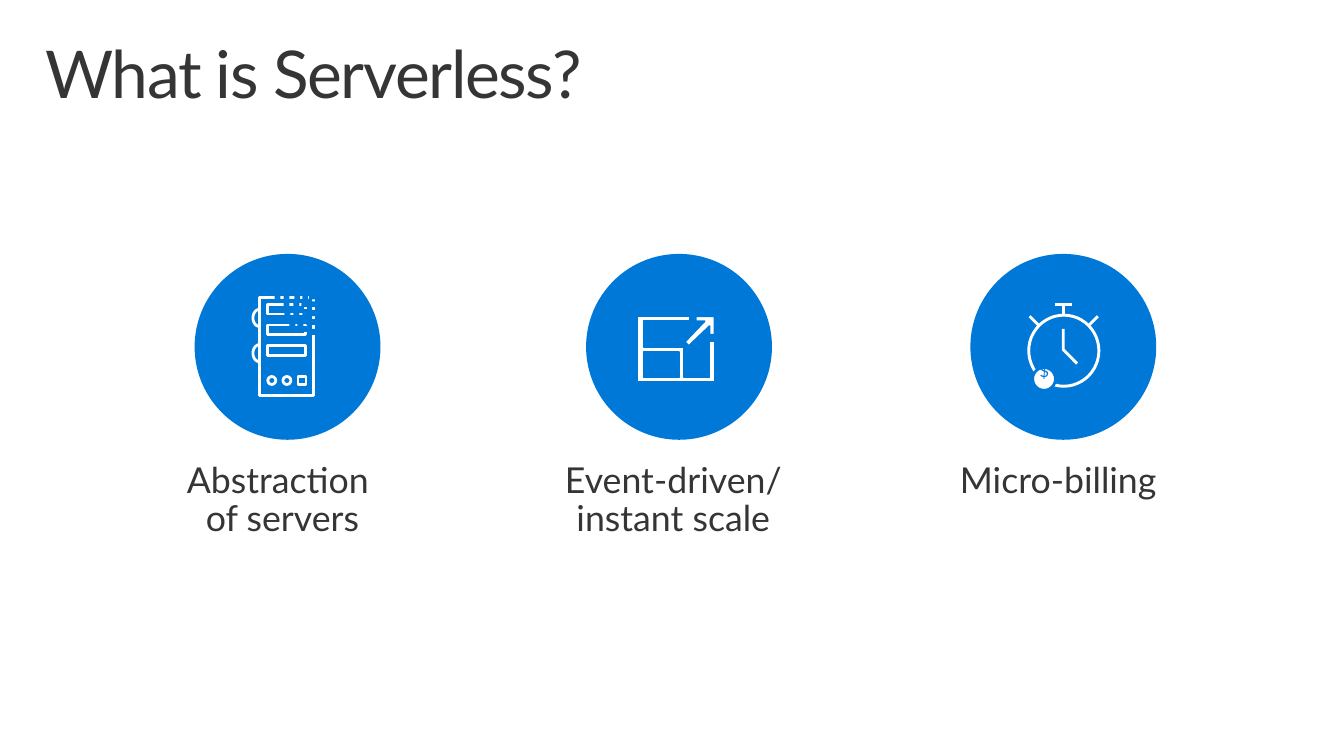
import math

from lxml import etree
from pptx import Presentation
from pptx.dml.color import RGBColor
from pptx.enum import shapes, text
from pptx.oxml import ns
from pptx.util import Pt

BLUE = RGBColor(0x00, 0x78, 0xD7)
WHITE = RGBColor(0xFF, 0xFF, 0xFF)
DARK = RGBColor(0x35, 0x35, 0x35)
FONT = "Lato"
OVAL = shapes.MSO_SHAPE.OVAL
RECT = shapes.MSO_SHAPE.RECTANGLE
DISC = 135.4
TOP = 185

# Blue squares that dissolve the server's top right corner
BITS = [
    (58.3, 29.5), (64.8, 28.8), (72.7, 28.8), (78.5, 28.8), (83.5, 28.8),
    (64.8, 33.8), (72, 33.8), (77.8, 34.6), (85, 34.6), (85, 41),
    (65.5, 42.5), (72, 41.8), (84.2, 47.5), (84.2, 54.7),
    (69.1, 49.7), (74.9, 49.7), (78.5, 52.6),
]
FRAME = [
    (90, 90), (71.3, 90), (71.3, 67.7), (41.8, 67.7), (41.8, 49), (75.6, 49),
    (75.6, 45.4), (37.4, 45.4), (37.4, 93.6), (93.6, 93.6), (93.6, 63.4), (90, 63.4),
]
PANE = [(41.8, 71.3), (67.7, 71.3), (67.7, 90), (41.8, 90)]
ARROW = [
    (79.9, 49), (86.4, 49), (72, 64.1), (74.9, 67), (90, 52.6),
    (90, 59), (93.6, 59), (93.6, 45.4), (79.9, 45.4),
]
HANDS = [(67.7, 54.7), (67.7, 69.8), (77.8, 79.9)]
TICKS = [
    (61.9, 36.7, 74.2, 36.7), (67.7, 44.6, 67.7, 36.7),
    (92.9, 45.4, 85.7, 52.6), (43.2, 45.4, 50.4, 52.6),
]


def write(parent, words, x, y, w, h, size=26, color=DARK, align=None, after=0,
          inset=(7.2, 11.5, 14.4, 11.5), wrap=True, grow=True, track=None):
    box = parent.add_textbox(Pt(x), Pt(y), Pt(w), Pt(h))
    frame = box.text_frame
    frame.word_wrap = wrap
    if grow:
        frame.auto_size = text.MSO_AUTO_SIZE.SHAPE_TO_FIT_TEXT
    frame.margin_left, frame.margin_top, frame.margin_right, frame.margin_bottom = map(Pt, inset)
    para = frame.paragraphs[0]
    para.text = words
    para.alignment = align
    para.line_spacing = 0.9
    para.space_after = Pt(after)
    for run in para.runs:
        font = run.font
        font.name, font.size = FONT, Pt(size)
        font.color.rgb = color
        if track:
            font._element.set("spc", str(track))


def paint(shape, fill, line, width):
    shape.shadow.inherit = False
    if fill is None:
        shape.fill.background()
    else:
        shape.fill.solid()
        shape.fill.fore_color.rgb = fill
    if line is None:
        shape.line.fill.background()
    else:
        shape.line.color.rgb = line
        shape.line.width = Pt(width)


class Icon:
    """A grouped icon on a blue disc; its lengths start at the disc's corner."""

    def __init__(self, slide, left):
        self.group = slide.shapes.add_group_shape().shapes
        self.left = left
        self.form(OVAL, 0, 0, DISC, DISC, fill=BLUE)

    def spot(self, x, y):
        return Pt(self.left + x), Pt(TOP + y)

    def form(self, kind, x, y, w, h, fill=None, line=None, width=2):
        shape = self.group.add_shape(kind, *self.spot(x, y), Pt(w), Pt(h))
        paint(shape, fill, line, width)

    def trace(self, *loops, close=False, fill=None, line=WHITE, width=2):
        pen = self.group.build_freeform(*self.spot(*loops[0][0]))
        for i, loop in enumerate(loops):
            if i:
                pen.move_to(*self.spot(*loop[0]))
            pen.add_line_segments([self.spot(*p) for p in loop[1:]], close=close)
        paint(pen.convert_to_shape(), fill, line, width)

    def rule(self, x1, y1, x2, y2):
        line = self.group.add_connector(
            shapes.MSO_CONNECTOR.STRAIGHT, *self.spot(x1, y1), *self.spot(x2, y2))
        line.line.color.rgb = WHITE
        line.line.width = Pt(2.13)
        etree.SubElement(line._element.spPr, ns.qn("a:effectLst"))


def server(slide, left):
    icon = Icon(slide, left)
    icon.form(RECT, 47.5, 31.7, 38.9, 71.3, line=WHITE)
    for row in range(3):
        icon.form(RECT, 53.3, 36.7 + 15.1 * row, 27.4, 7.2, line=WHITE)
    for mid in (46.6, 72.3):
        turns = [math.pi * step / 16 for step in range(17)]
        icon.trace([(47.5 - 5 * math.sin(t), mid + 6.3 * math.cos(t)) for t in turns])
    for col, kind in enumerate((OVAL, OVAL, RECT)):
        icon.form(kind, 53.3 + 11 * col, 89.3, 5.8, 5.8, line=WHITE)
    for x, y in BITS:
        icon.form(RECT, x, y, 4.3, 4.3, fill=BLUE)
    icon.form(RECT, 78.5, 40.3, 4.3, 5.8, fill=BLUE)


def scale(slide, left):
    icon = Icon(slide, left)
    for loops in ((FRAME, PANE), (ARROW,)):
        icon.trace(*loops, close=True, fill=WHITE, line=BLUE, width=1.25)


def timer(slide, left):
    icon = Icon(slide, left)
    icon.trace(HANDS, width=2.13)
    icon.form(OVAL, 42.5, 44.6, 51.1, 51.8, line=WHITE, width=2.13)
    for tick in TICKS:
        icon.rule(*tick)
    icon.form(OVAL, 45.4, 82.8, 16.6, 16.6, fill=WHITE, line=BLUE)
    write(icon.group, "$", left + 36, TOP + 73.4, 36, 36, size=12, color=BLUE,
          after=6, inset=(14.4, 11.5, 14.4, 11.5), wrap=False)


def main():
    deck = Presentation()
    deck.slide_width, deck.slide_height = Pt(979.2), Pt(550.8)
    slide = deck.slides.add_slide(deck.slide_layouts[6])
    write(slide.shapes, "What is Serverless?", 21.6, 23, 936, 72, size=48,
          inset=(11.5, 7.2, 11.5, 7.2), grow=False, track=-100)
    for draw, left, words, x, w, h in (
        (server, 141.8, "Abstraction \vof servers", 105.8, 207.4, 81.4),
        (scale, 427, "Event-driven/ instant scale", 387.4, 213.8, 81.4),
        (timer, 707, "Micro-billing", 676.1, 197.3, 52.6),
    ):
        draw(slide, left)
        write(slide.shapes, words, x, 325.4, w, h,
              align=text.PP_ALIGN.CENTER, after=12.2)
    deck.save("out.pptx")


if __name__ == "__main__":
    main()
